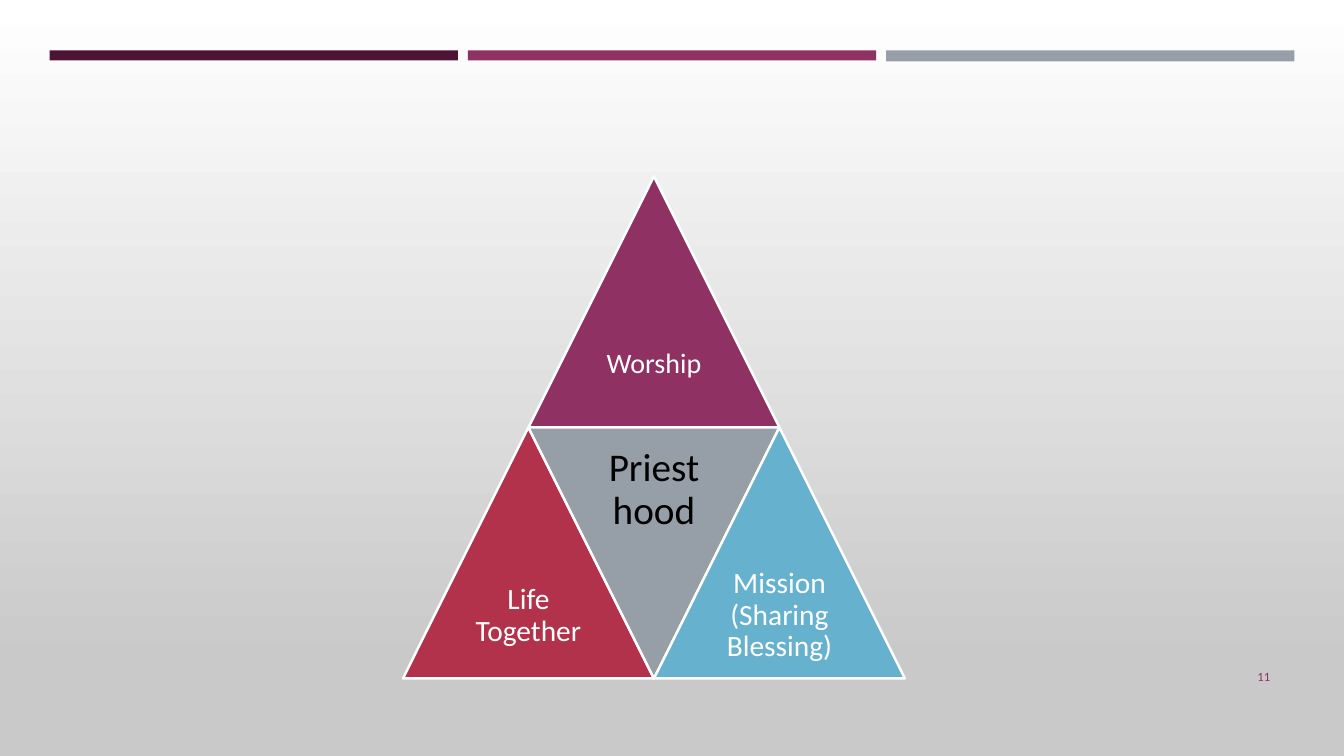
from pptx import Presentation
from pptx.dml.color import RGBColor
from pptx.enum import shapes, text
from pptx.util import Pt

WHITE = RGBColor(0xFF, 0xFF, 0xFF)
BLACK = RGBColor(0, 0, 0)
SILVER = RGBColor(0xC9, 0xC9, 0xC9)
WINE = RGBColor(0x4D, 0x14, 0x34)
PLUM = RGBColor(0x90, 0x31, 0x63)
GREY = RGBColor(0x96, 0x9F, 0xA7)
RED = RGBColor(0xB2, 0x32, 0x4B)
BLUE = RGBColor(0x66, 0xB1, 0xCE)

FONT = "Calibri"
BACKGROUND = [(0, WHITE), (0.88, SILVER)]
BARS = [(WINE, 7.2), (PLUM, 7.2), (GREY, 7.9)]
PARTS = [
    {"label": "Worship", "column": 1, "row": 0, "fill": PLUM, "size": 20, "inset": 6},
    {"label": "Life Together", "column": 0, "row": 1, "fill": RED, "size": 21, "inset": 6.3},
    {"label": "Priesthood", "column": 1, "row": 1, "fill": GREY, "size": 28, "inset": 8.4,
     "color": BLACK, "inverted": True},
    {"label": "Mission (Sharing Blessing)", "column": 2, "row": 1, "fill": BLUE, "size": 21,
     "inset": 6.3},
]
PAGE_NUMBER = "11"

BAR_LEFT, BAR_TOP, BAR_WIDTH, BAR_GAP = 35.4, 36, 291.6, 7.2
PYRAMID_LEFT, PYRAMID_TOP, SIDE = 287.8, 126, 179.3


def add_shape(slide, kind, left, top, width, height, fill):
    shape = slide.shapes.add_shape(kind, Pt(left), Pt(top), Pt(width), Pt(height))
    shape.shadow.inherit = False
    shape.fill.solid()
    shape.fill.fore_color.rgb = fill
    shape.line.fill.background()
    return shape


def add_text(slide, words, left, top, width, height, *, size, color=WHITE,
             align=text.PP_ALIGN.CENTER, inset=(7.2, 3.6), spacing=1.0):
    box = slide.shapes.add_textbox(Pt(left), Pt(top), Pt(width), Pt(height))
    frame = box.text_frame
    frame.word_wrap = True
    frame.vertical_anchor = text.MSO_ANCHOR.MIDDLE
    frame.margin_left = frame.margin_right = Pt(inset[0])
    frame.margin_top = frame.margin_bottom = Pt(inset[1])
    paragraph = frame.paragraphs[0]
    paragraph.alignment = align
    paragraph.line_spacing = spacing
    run = paragraph.add_run()
    run.text = words
    run.font.name = FONT
    run.font.size = Pt(size)
    run.font.color.rgb = color


def add_part(slide, part):
    left = PYRAMID_LEFT + part["column"] * SIDE / 2
    top = PYRAMID_TOP + part["row"] * SIDE
    inverted = part.get("inverted", False)
    triangle = add_shape(slide, shapes.MSO_SHAPE.ISOSCELES_TRIANGLE,
                         left, top, SIDE, SIDE, part["fill"])
    triangle.rotation = 180 if inverted else 0
    triangle.line.color.rgb = WHITE
    triangle.line.width = Pt(1.75)
    label_top = top if inverted else top + SIDE / 2
    add_text(slide, part["label"], left + SIDE / 4, label_top, SIDE / 2, SIDE / 2,
             size=part["size"], color=part.get("color", WHITE),
             inset=(part["inset"], part["inset"]), spacing=0.9)


def main():
    deck = Presentation()
    deck.slide_width, deck.slide_height = Pt(960), Pt(540)
    slide = deck.slides.add_slide(deck.slide_layouts[6])

    backdrop = slide.background.fill
    backdrop.gradient()
    backdrop.gradient_angle = 270
    for stop, (position, color) in zip(backdrop.gradient_stops, BACKGROUND):
        stop.position = position
        stop.color.rgb = color

    for index, (color, height) in enumerate(BARS):
        add_shape(slide, shapes.MSO_SHAPE.RECTANGLE,
                  BAR_LEFT + index * (BAR_WIDTH + BAR_GAP), BAR_TOP, BAR_WIDTH, height, color)

    for part in PARTS:
        add_part(slide, part)

    add_text(slide, PAGE_NUMBER, 831.6, 468.7, 82.8, 28.8, size=9, color=PLUM,
             align=text.PP_ALIGN.RIGHT)
    deck.save("out.pptx")


if __name__ == "__main__":
    main()
